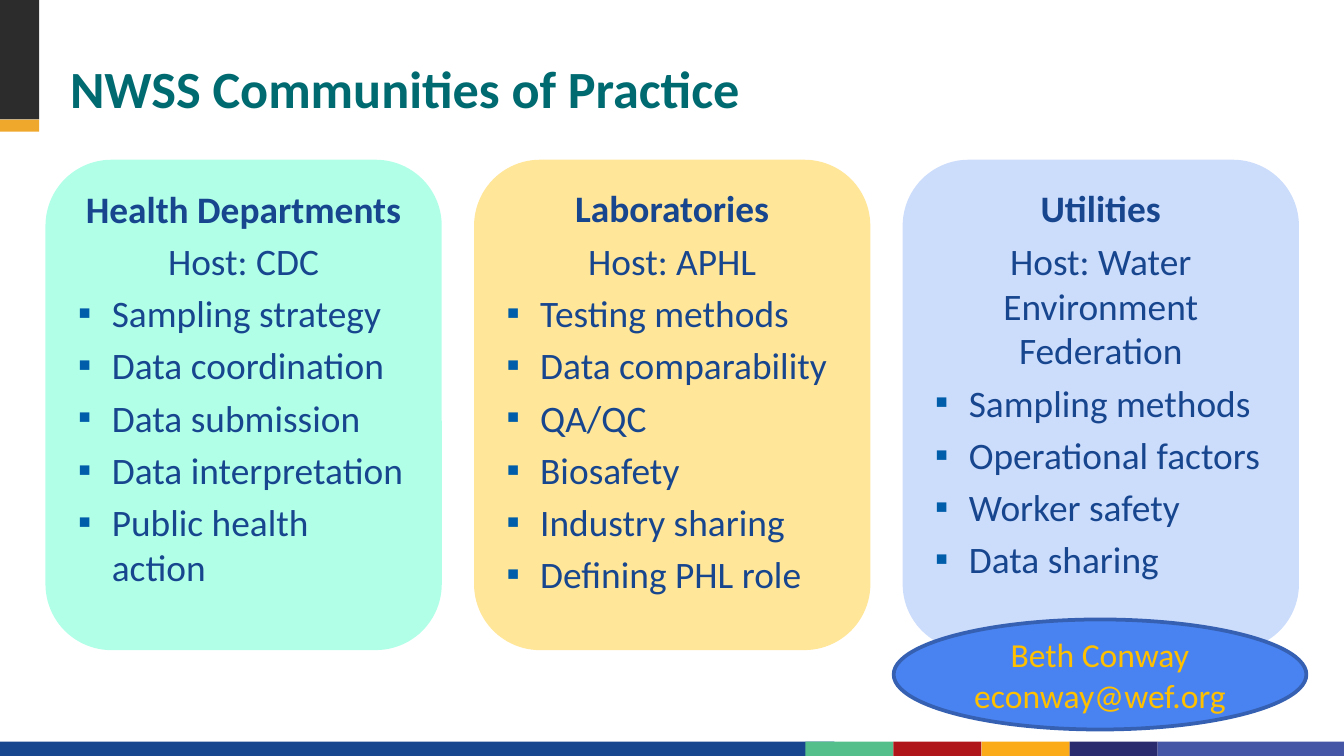
from dataclasses import dataclass

from lxml import etree
from pptx import Presentation
from pptx.dml.color import RGBColor
from pptx.enum.shapes import MSO_SHAPE
from pptx.enum.text import MSO_ANCHOR, MSO_AUTO_SIZE, PP_ALIGN
from pptx.oxml.ns import qn
from pptx.util import Cm, Pt

RECT, ROUNDED, OVAL = MSO_SHAPE.RECTANGLE, MSO_SHAPE.ROUNDED_RECTANGLE, MSO_SHAPE.OVAL
TOP, MIDDLE, BOTTOM = MSO_ANCHOR.TOP, MSO_ANCHOR.MIDDLE, MSO_ANCHOR.BOTTOM
LEFT, CENTER = PP_ALIGN.LEFT, PP_ALIGN.CENTER
NO_AUTOFIT = MSO_AUTO_SIZE.NONE


@dataclass(frozen=True)
class Theme:
    font: str = "Calibri"
    title_size: int = 28
    card_size: int = 20
    contact_size: int = 18
    title: str = "006A71"
    text: str = "17468F"
    bullet: str = "005DAA"
    contact_fill: str = "4983F2"
    contact_line: str = "3661B3"
    contact_text: str = "FFC000"
    tab_dark: str = "2D2C2C"
    tab_gold: str = "F0A82C"
    cards: tuple = ("B2FFE8", "FFE699", "CCDCFB")
    strip: tuple = ("55BF8B", "B01519", "FBAB18", "292B6E", "4656A6")


theme = Theme()


def add_filled(preset, left, top, width, height, color):
    shape = slide.shapes.add_shape(preset, Cm(left), Cm(top), Cm(width), Cm(height))
    shape.shadow.inherit = False
    shape.fill.solid()
    shape.fill.fore_color.rgb = RGBColor.from_string(color)
    shape.line.fill.background()
    return shape


def style_text(paragraph, size, color, align, bold=False):
    paragraph.alignment = align
    for run in paragraph.runs:
        run.font.name = theme.font
        run.font.size = Pt(size)
        run.font.bold = bold
        run.font.color.rgb = RGBColor.from_string(color)


presentation = Presentation()
presentation.slide_width, presentation.slide_height = Cm(25.4), Cm(14.29)
slide = presentation.slides.add_slide(presentation.slide_layouts[1])
title, first_card = slide.placeholders

# Colour strip along the bottom
strip_top, strip_height, strip_left, strip_step = 14.02, 0.27, 15.22, 1.665
add_filled(RECT, 0, strip_top, 15.77, strip_height, theme.text)
for index, color in enumerate(theme.strip):
    left = strip_left + index * strip_step
    is_last = index == len(theme.strip) - 1
    width = 25.4 - left if is_last else strip_step
    add_filled(RECT, left, strip_top, width, strip_height, color)

# Corner tab
add_filled(RECT, 0, 0, 0.74, 2.26, theme.tab_dark)
add_filled(RECT, 0, 2.26, 0.74, 0.23, theme.tab_gold)

# Title
title.left, title.top, title.width, title.height = Cm(1.07), Cm(0.48), Cm(22.86), Cm(1.9)
title.text_frame.text = "NWSS Communities of Practice"
title.text_frame.auto_size = NO_AUTOFIT
title.text_frame.vertical_anchor = BOTTOM
title.text_frame.paragraphs[0].line_spacing = Pt(30)
style_text(title.text_frame.paragraphs[0], theme.title_size, theme.title, LEFT, True)

# Community cards: heading, host, topics
communities = [
    ("Health Departments", "Host: CDC", "Sampling strategy", "Data coordination",
     "Data submission", "Data interpretation", "Public health action"),
    ("Laboratories", "Host: APHL", "Testing methods", "Data comparability",
     "QA/QC", "Biosafety", "Industry sharing", "Defining PHL role"),
    ("Utilities", "Host: Water Environment Federation", "Sampling methods",
     "Operational factors", "Worker safety", "Data sharing"),
]
card_left, card_step, card_top, card_width, card_height = 0.86, 8.1, 3.02, 7.49, 9.27
for index, (lines, color) in enumerate(zip(communities, theme.cards)):
    left = card_left + index * card_step
    if index == 0:
        card = first_card
        card.left, card.top = Cm(left), Cm(card_top)
        card.width, card.height = Cm(card_width), Cm(card_height)
        outline = etree.SubElement(card.element.spPr, qn("a:prstGeom"), prst="roundRect")
        etree.SubElement(outline, qn("a:avLst"))
        card.fill.solid()
        card.fill.fore_color.rgb = RGBColor.from_string(color)
    else:
        card = add_filled(ROUNDED, left, card_top, card_width, card_height, color)
    frame = card.text_frame
    frame.text = "\n".join(lines)
    frame.word_wrap = True
    frame.auto_size = NO_AUTOFIT
    frame.vertical_anchor = TOP
    for row, paragraph in enumerate(frame.paragraphs):
        is_topic = row > 1
        properties = paragraph._p.get_or_add_pPr()
        indent = Cm(0.635) if is_topic else 0
        properties.set("marL", str(indent))
        properties.set("indent", str(-indent))
        if is_topic:
            bullet_color = etree.SubElement(properties, qn("a:buClr"))
            etree.SubElement(bullet_color, qn("a:srgbClr"), val=theme.bullet)
            etree.SubElement(properties, qn("a:buFont"), typeface=theme.font)
            etree.SubElement(properties, qn("a:buChar"), char="▪")
        else:
            etree.SubElement(properties, qn("a:buNone"))
        paragraph.space_before = Pt(4 if row else 0)
        style_text(paragraph, theme.card_size, theme.text,
                   LEFT if is_topic else CENTER, bold=row == 0)

# Contact for the utilities community
contact = add_filled(OVAL, 16.89, 11.71, 7.8, 2.08, theme.contact_fill)
contact.line.color.rgb = RGBColor.from_string(theme.contact_line)
contact.line.width = Pt(2)
contact.text_frame.text = "Beth Conway\neconway@wef.org"
contact.text_frame.word_wrap = True
contact.text_frame.vertical_anchor = MIDDLE
for paragraph in contact.text_frame.paragraphs:
    style_text(paragraph, theme.contact_size, theme.contact_text, CENTER)

presentation.save("out.pptx")
